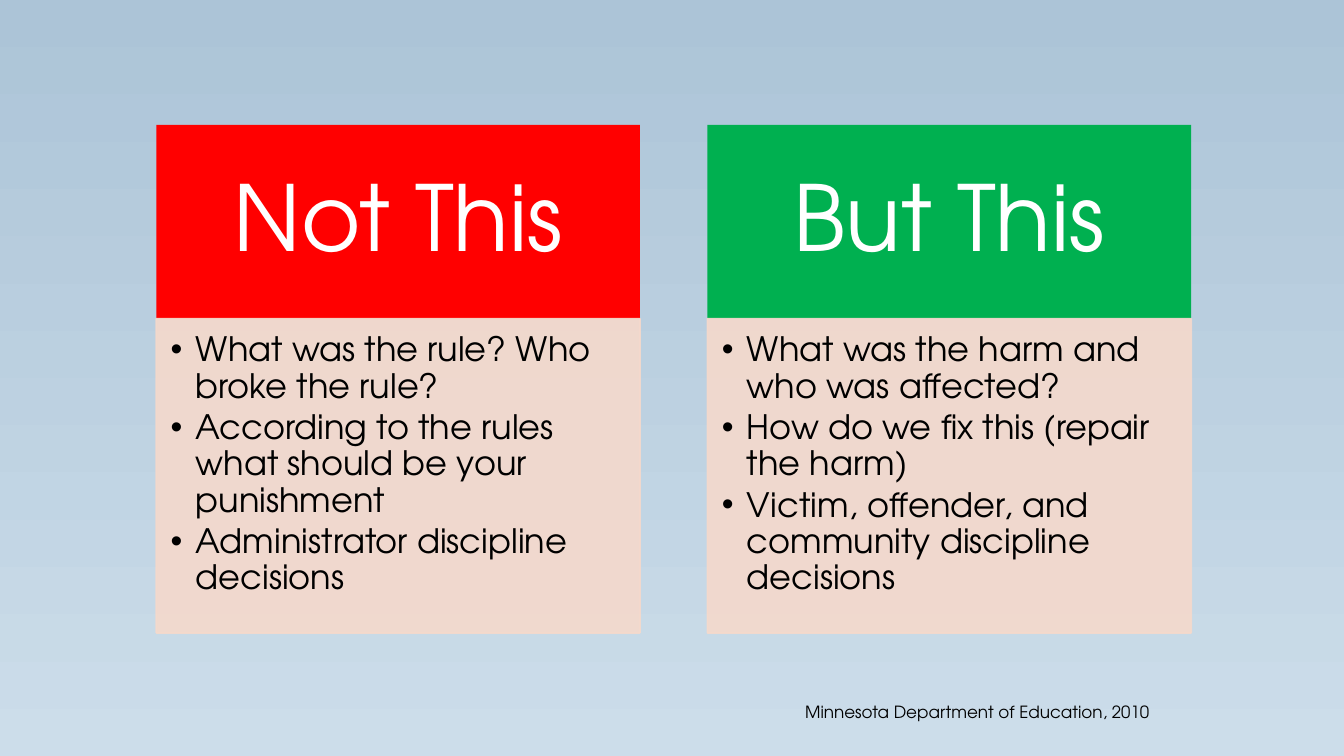
import pptx
import pptx.util
import pptx.dml.color
import pptx.enum.shapes
import pptx.enum.text
import pptx.oxml
import pptx.oxml.ns

Cm, Pt = pptx.util.Cm, pptx.util.Pt
ALIGN = pptx.enum.text.PP_ALIGN
ANCHOR = pptx.enum.text.MSO_ANCHOR

FONT = "TeX Gyre Adventor"
SKY = ["ACC4D7", "CCDDEA"]
PEACH, OPAQUE = "F5D9CC", 90
CARDS = [
    ("Not This", "FF0000", [
        "What was the rule? Who broke the rule?",
        "According to the rules what should be your punishment",
        "Administrator discipline decisions",
    ]),
    ("But This", "00B050", [
        "What was the harm and who was affected?",
        "How do we fix this (repair the harm)",
        "Victim, offender, and community discipline decisions",
    ]),
]
SOURCE = "Minnesota Department of Education, 2010"

LEFT, TOP, WIDTH, STEP = 3.94, 3.15, 12.19, 13.89
HEAD, BODY = 4.88, 7.92
INDENT = 0.635


def color(code):
    return pptx.dml.color.RGBColor.from_string(code)


def fade(fill):
    """Make a solid fill slightly transparent."""
    for node in fill._xPr.iter(pptx.oxml.ns.qn("a:srgbClr")):
        if not len(node):
            alpha = pptx.oxml.parse_xml(
                f'<a:alpha {pptx.oxml.ns.nsdecls("a")} val="{OPAQUE * 1000}"/>')
            node.append(alpha)


def write(para, text, size, tint):
    run = para.add_run()
    run.text = text
    run.font.name, run.font.size = FONT, Pt(size)
    run.font.color.rgb = color(tint)


def inset(frame, left, top, right, bottom):
    frame.word_wrap = True
    frame.margin_left, frame.margin_top = Cm(left), Cm(top)
    frame.margin_right, frame.margin_bottom = Cm(right), Cm(bottom)


def bullet(para):
    props = para._p.get_or_add_pPr()
    props.set("marL", str(Cm(INDENT)))
    props.set("indent", str(-Cm(INDENT)))
    for tag in ('buFont typeface="Arial"', 'buChar char="•"'):
        props.append(pptx.oxml.parse_xml(
            f'<a:{tag} {pptx.oxml.ns.nsdecls("a")}/>'))


def block(slide, left, top, height, fill):
    box = slide.shapes.add_shape(
        pptx.enum.shapes.MSO_SHAPE.RECTANGLE,
        Cm(left), Cm(top), Cm(WIDTH), Cm(height))
    box.shadow.inherit = False
    box.fill.solid()
    box.fill.fore_color.rgb = color(fill)
    return box


def card(slide, left, title, fill, points):
    head = block(slide, left, TOP, HEAD, fill)
    head.line.fill.background()
    frame = head.text_frame
    inset(frame, 1.3, 0.74, 1.3, 0.74)
    frame.vertical_anchor = ANCHOR.MIDDLE
    para = frame.paragraphs[0]
    para.alignment, para.line_spacing = ALIGN.CENTER, 0.9
    write(para, title, 65, "FFFFFF")

    body = block(slide, left, TOP + HEAD, BODY, PEACH)
    body.line.color.rgb = color(PEACH)
    body.line.width = Pt(1.25)
    fade(body.fill)
    fade(body.line.fill)
    frame = body.text_frame
    inset(frame, 0.36, 0.36, 0.48, 0.53)
    frame.vertical_anchor = ANCHOR.TOP
    for i, point in enumerate(points):
        para = frame.add_paragraph() if i else frame.paragraphs[0]
        para.alignment, para.line_spacing = ALIGN.LEFT, 0.9
        para.space_after = Pt(3.6)
        bullet(para)
        write(para, point, 24, "000000")


def main():
    deck = pptx.Presentation()
    deck.slide_width, deck.slide_height = Cm(33.87), Cm(19.05)
    slide = deck.slides.add_slide(deck.slide_layouts[6])
    sky = slide.background.fill
    sky.gradient()
    sky.gradient_angle = 270
    for i, (stop, tint) in enumerate(zip(sky.gradient_stops, SKY)):
        stop.position = i
        stop.color.rgb = color(tint)

    for i, (title, fill, points) in enumerate(CARDS):
        card(slide, LEFT + i * STEP, title, fill, points)

    note = slide.shapes.add_textbox(Cm(20.04), Cm(17.55), Cm(9.32), Cm(0.77))
    note.text_frame.word_wrap = True
    write(note.text_frame.paragraphs[0], SOURCE, 12, "000000")
    deck.save("out.pptx")


if __name__ == "__main__":
    main()
